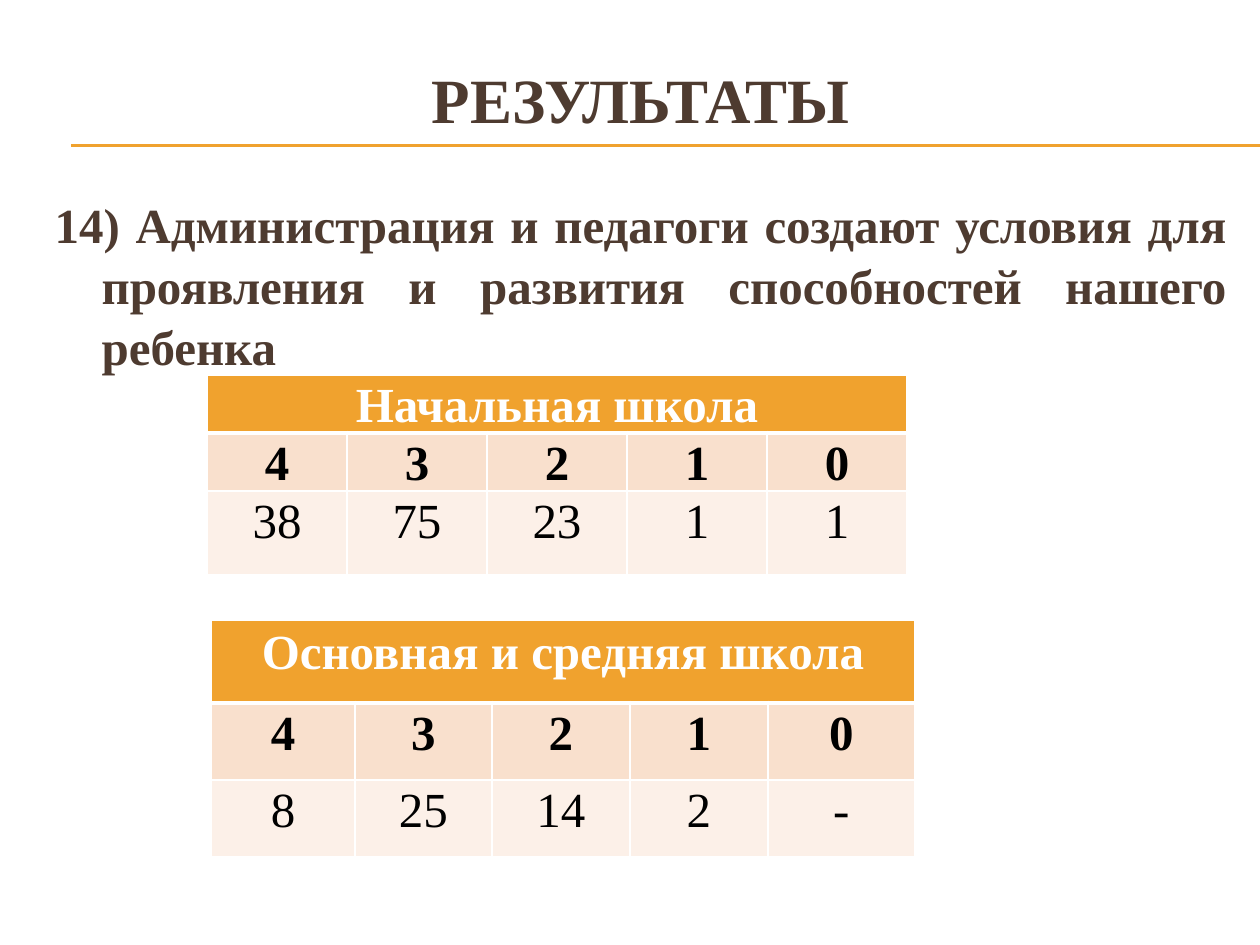
"""Build the survey results slide with answer counts for two school levels."""
from dataclasses import dataclass

import lxml.etree
import pptx
import pptx.dml.color
import pptx.enum.shapes
import pptx.enum.text
import pptx.oxml.ns
import pptx.util

EMU_PER_PX = 914400 / 126
FONT = "Times New Roman"
COLORS = {
    "brown": "4E3B30",
    "orange": "F0A22E",
    "peach": "F9E0CD",
    "cream": "FCF0E8",
    "white": "FFFFFF",
    "black": "000000",
}
ALIGN = pptx.enum.text.PP_ALIGN
ANCHOR = pptx.enum.text.MSO_ANCHOR


@dataclass
class ScoreTable:
    school: str
    counts: list[str]
    left: int
    top: int
    widths: list[int]
    heights: list[int]
    heading_inset: tuple[int, int]
    heading_spacing: float


SCORES = ["4", "3", "2", "1", "0"]
SCHOOLS = [
    ScoreTable("Начальная школа", ["38", "75", "23", "1", "1"], 207, 375,
               [140] * 5, [57, 57, 84], (9, 0), 1.07),
    ScoreTable("Основная и средняя школа", ["8", "25", "14", "2", "-"], 211, 620,
               [144, 137, 138, 138, 147], [83, 77, 77], (13, 6), 1.0),
]


def px(length: int) -> pptx.util.Emu:
    return pptx.util.Emu(round(length * EMU_PER_PX))


def rgb(name: str) -> pptx.dml.color.RGBColor:
    return pptx.dml.color.RGBColor.from_string(COLORS[name])


def write(frame, text: str, *, size: int = 28, color: str = "brown", bold: bool = True,
          align=ALIGN.CENTER, spacing: float = 1.0) -> None:
    paragraph = frame.paragraphs[0]
    paragraph.alignment = align
    paragraph.line_spacing = spacing
    run = paragraph.add_run()
    run.text = text
    run.font.name = FONT
    run.font.size = pptx.util.Pt(size)
    run.font.bold = bold
    run.font.color.rgb = rgb(color)


def place(placeholder, left: int, top: int, width: int, height: int, anchor) -> None:
    placeholder.left, placeholder.top = px(left), px(top)
    placeholder.width, placeholder.height = px(width), px(height)
    placeholder.text_frame.auto_size = pptx.enum.text.MSO_AUTO_SIZE.NONE
    placeholder.text_frame.vertical_anchor = anchor


def add_rule(slide, y: int) -> None:
    rule = slide.shapes.add_connector(
        pptx.enum.shapes.MSO_CONNECTOR.STRAIGHT, px(71), px(y), px(1260), px(y))
    rule.line.color.rgb = rgb("orange")
    rule.line.width = pptx.util.Pt(0.75)
    lxml.etree.SubElement(rule._element.spPr, pptx.oxml.ns.qn("a:effectLst"))


def hang_without_bullet(paragraph, indent: int) -> None:
    properties = paragraph._p.get_or_add_pPr()
    properties.set("marL", str(px(indent)))
    properties.set("indent", str(-px(indent)))
    lxml.etree.SubElement(properties, pptx.oxml.ns.qn("a:buNone"))


def set_borders(cell, row: int) -> None:
    points = {"L": 1, "R": 1, "T": 3 if row == 1 else 1, "B": 3 if row == 0 else 1}
    for side, width in points.items():
        border = lxml.etree.SubElement(
            cell._tc.get_or_add_tcPr(), pptx.oxml.ns.qn(f"a:ln{side}"),
            w=str(pptx.util.Pt(width)))
        fill = lxml.etree.SubElement(border, pptx.oxml.ns.qn("a:solidFill"))
        lxml.etree.SubElement(fill, pptx.oxml.ns.qn("a:srgbClr"), val=COLORS["white"])


def style_cell(cell, row: int, fill: str, inset: tuple[int, int]) -> None:
    set_borders(cell, row)
    cell.fill.solid()
    cell.fill.fore_color.rgb = rgb(fill)
    cell.margin_left = cell.margin_right = px(inset[0])
    cell.margin_top = cell.margin_bottom = px(inset[1])
    cell.vertical_anchor = ANCHOR.TOP


def add_scores(slide, school: ScoreTable) -> None:
    table = slide.shapes.add_table(
        3, len(SCORES), px(school.left), px(school.top),
        px(sum(school.widths)), px(sum(school.heights))).table
    for column, width in zip(table.columns, school.widths):
        column.width = px(width)
    for table_row, height in zip(table.rows, school.heights):
        table_row.height = px(height)
    for row, fill in enumerate(["orange", "peach", "cream"]):
        inset = school.heading_inset if row == 0 else (9, 0)
        for column in range(len(SCORES)):
            style_cell(table.cell(row, column), row, fill, inset)
    heading = table.cell(0, 0)
    heading.merge(table.cell(0, len(SCORES) - 1))
    write(heading.text_frame, school.school, color="white", spacing=school.heading_spacing)
    for column, (score, count) in enumerate(zip(SCORES, school.counts)):
        write(table.cell(1, column).text_frame, score, color="black", spacing=1.07)
        write(table.cell(2, column).text_frame, count, color="black", bold=False,
              spacing=1.07)


def main() -> None:
    deck = pptx.Presentation()
    deck.slide_width, deck.slide_height = px(1260), px(945)
    slide = deck.slides.add_slide(deck.slide_layouts[1])
    title, question = slide.placeholders

    place(title, 42, 39, 1197, 118, ANCHOR.MIDDLE)
    write(title.text_frame, "РЕЗУЛЬТАТЫ", size=36)
    place(question, 42, 186, 1197, 650, ANCHOR.TOP)
    write(question.text_frame,
          "14) Администрация и педагоги создают условия для проявления "
          "и развития способностей нашего ребенка",
          align=ALIGN.JUSTIFY, spacing=1.04)
    hang_without_bullet(question.text_frame.paragraphs[0], 47)

    for y in (145, 146):
        add_rule(slide, y)
    for school in SCHOOLS:
        add_scores(slide, school)
    deck.save("out.pptx")


if __name__ == "__main__":
    main()
